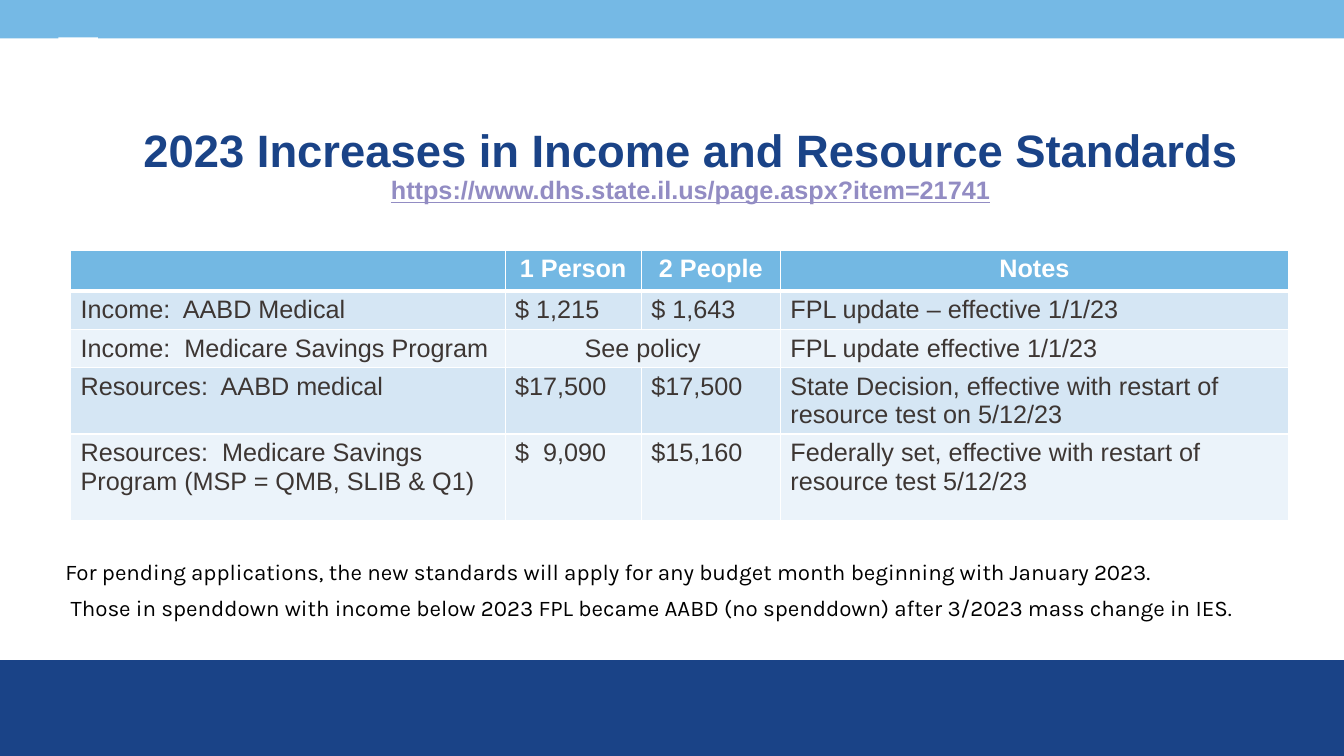
from lxml import etree
from pptx import Presentation
from pptx.dml.color import RGBColor
from pptx.enum import shapes, text
from pptx.oxml import ns
from pptx.util import Inches, Pt

# Content
TITLE = "2023 Increases in Income and Resource Standards"
ADDRESS = "https://www.dhs.state.il.us/page.aspx?item=21741"
STANDARDS = [
    ("", "1 Person", "2 People", "Notes"),
    ("Income:  AABD Medical", "$ 1,215", "$ 1,643", "FPL update – effective 1/1/23"),
    ("Income:  Medicare Savings Program", "See policy", None, "FPL update effective 1/1/23"),
    ("Resources:  AABD medical", "$17,500", "$17,500",
     "State Decision, effective with restart of resource test on 5/12/23"),
    ("Resources:  Medicare Savings Program (MSP = QMB, SLIB & Q1)", "$  9,090", "$15,160",
     "Federally set, effective with restart of resource test 5/12/23"),
]
REMARKS = [
    "For pending applications, the new standards will apply for any budget month "
    "beginning with January 2023.",
    " Those in spenddown with income below 2023 FPL became AABD (no spenddown) "
    "after 3/2023 mass change in IES.",
]

# Colours and measures, in inches
NAVY = RGBColor(0x1A, 0x43, 0x87)
SKY = RGBColor(0x75, 0xB9, 0xE5)
HEADER = RGBColor(0x73, 0xB8, 0xE3)
BANDS = RGBColor(0xEB, 0xF3, 0xFA), RGBColor(0xD5, 0xE6, 0xF4)
WHITE = RGBColor(0xFF, 0xFF, 0xFF)
BLACK = RGBColor(0, 0, 0)
INK = RGBColor(0x3D, 0x36, 0x33)
LILAC = RGBColor(0x92, 0x8C, 0xC3)
WIDTH, HEIGHT = 13.33, 7.5
COLUMNS = 4.31, 1.35, 1.38, 5.04
ROWS = 0.35, 0.35, 0.35, 0.6, 0.86
BARS = [
    (0, 6.55, WIDTH, HEIGHT - 6.55, NAVY),
    (0, 0, WIDTH, 0.38, SKY),
    (0.58, 0.37, 0.39, 0.41, WHITE),
]


def write(para, words, size=18, color=INK, font="Arial", bold=False, underline=None):
    span = para.add_run()
    span.text = words
    span.font.name, span.font.size = font, Pt(size)
    span.font.bold, span.font.underline = bold, underline
    span.font.color.rgb = color


def add_borders(cell, bottom):
    properties = cell._tc.get_or_add_tcPr()
    for side, points in (("L", 1), ("R", 1), ("T", 1), ("B", bottom)):
        line = etree.SubElement(properties, ns.qn(f"a:ln{side}"), w=str(Pt(points)))
        fill = etree.SubElement(line, ns.qn("a:solidFill"))
        etree.SubElement(fill, ns.qn("a:srgbClr"), val=str(WHITE))


deck = Presentation()
deck.slide_width, deck.slide_height = Inches(WIDTH), Inches(HEIGHT)
page = deck.slides.add_slide(deck.slide_layouts[5])

# Coloured bars
for *place, color in BARS:
    bar = page.shapes.add_shape(shapes.MSO_SHAPE.RECTANGLE, *map(Inches, place))
    bar.shadow.inherit = False
    bar.fill.solid()
    bar.fill.fore_color.rgb = color
    bar.line.fill.background()

# Title with its web address
title = page.shapes.title
title.left, title.top, title.width, title.height = map(Inches, (1.29, 0.93, 11.12, 1.45))
frame = title.text_frame
frame.word_wrap = True
frame.auto_size = text.MSO_AUTO_SIZE.NONE
frame.vertical_anchor = text.MSO_ANCHOR.MIDDLE
heading = frame.paragraphs[0]
heading.alignment, heading.line_spacing = text.PP_ALIGN.CENTER, 0.9
write(heading, TITLE, size=32.4, color=NAVY, bold=True)
heading.add_line_break()
write(heading, ADDRESS, color=LILAC, bold=True, underline=True)

# Table of standards
table = page.shapes.add_table(
    len(ROWS), len(COLUMNS), Inches(0.7), Inches(2.48),
    Inches(sum(COLUMNS)), Inches(sum(ROWS))).table
for column, width in zip(table.columns, COLUMNS):
    column.width = Inches(width)
for row, height in zip(table.rows, ROWS):
    row.height = Inches(height)
for r, record in enumerate(STANDARDS):
    is_header = r == 0
    for c, words in enumerate(record):
        cell = table.cell(r, c)
        add_borders(cell, bottom=3 if is_header else 1)
        cell.fill.solid()
        cell.fill.fore_color.rgb = HEADER if is_header else BANDS[r % 2]
        if words is None:
            table.cell(r, c - 1).merge(cell)
            table.cell(r, c - 1).text_frame.paragraphs[0].alignment = text.PP_ALIGN.CENTER
            continue
        para = cell.text_frame.paragraphs[0]
        if is_header:
            para.alignment = text.PP_ALIGN.CENTER
        if words:
            write(para, words, color=WHITE if is_header else INK, bold=is_header)

# Remarks below the table
box = page.shapes.add_textbox(*map(Inches, (0.55, 5.49, 12.23, 0.71)))
frame = box.text_frame
frame.word_wrap = True
for i, remark in enumerate(REMARKS):
    para = frame.add_paragraph() if i else frame.paragraphs[0]
    if i:
        para.space_before = Pt(6)
    write(para, remark, size=16, color=BLACK, font="Karla")

deck.save("out.pptx")
